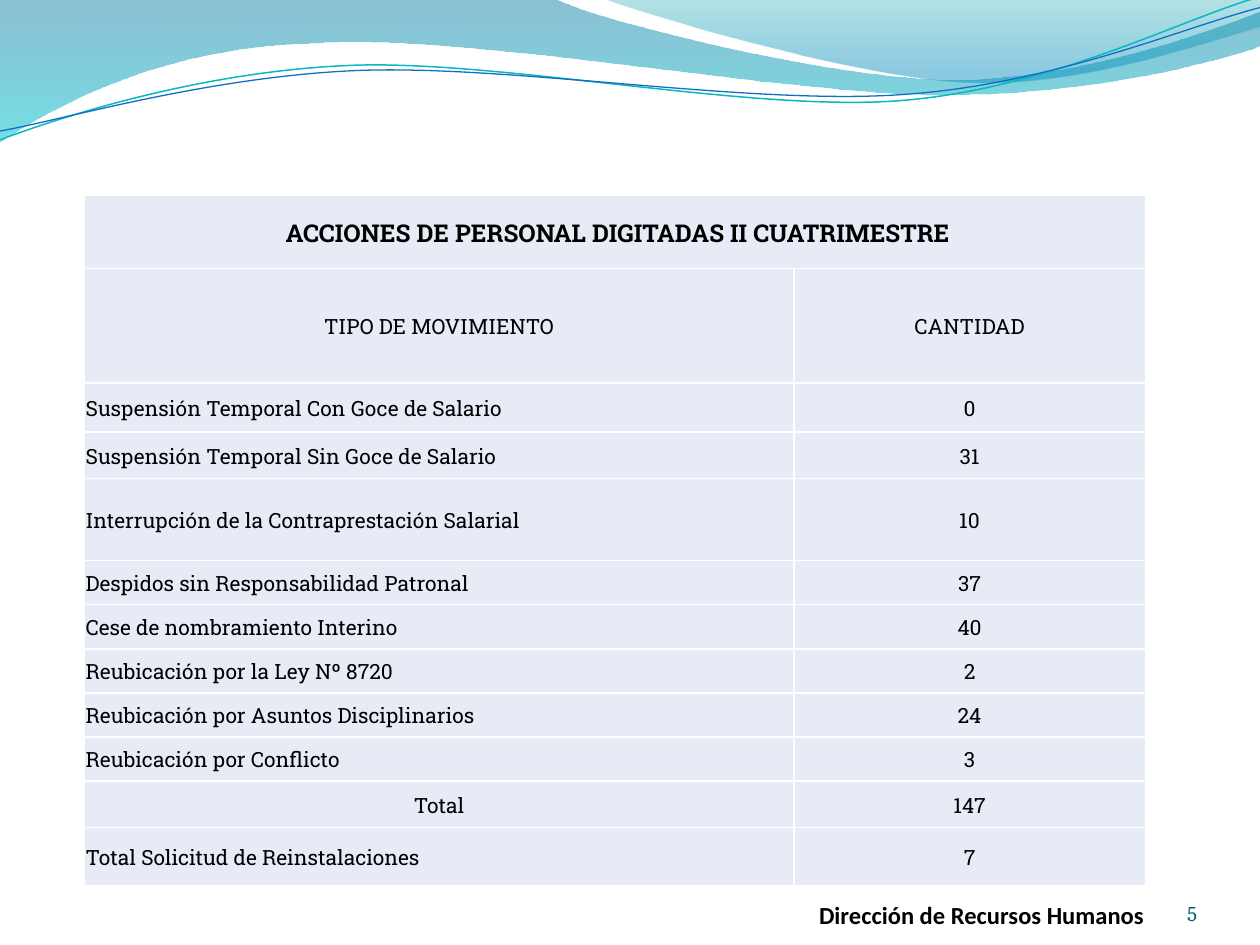
from math import cos, radians, sin

from lxml.etree import SubElement
from pptx import Presentation
from pptx.dml.color import RGBColor
from pptx.enum.text import MSO_ANCHOR as Anchor, PP_ALIGN as Align
from pptx.oxml import parse_xml
from pptx.oxml.ns import nsdecls, qn
from pptx.util import Inches, Pt

BLACK = RGBColor(0x00, 0x00, 0x00)
WHITE = RGBColor(0xFF, 0xFF, 0xFF)
CELL = RGBColor(0xE7, 0xEB, 0xF5)
PAGE_NUMBER = RGBColor(0x04, 0x5D, 0x75)
TEAL_LINE = RGBColor(0x0A, 0xB8, 0xBF)
BLUE_LINE = RGBColor(0x0F, 0x6F, 0xC6)
DEEP_BLUE = RGBColor(0x00, 0x74, 0xA1)
CYAN = RGBColor(0x00, 0xC6, 0xCF)
TEAL = RGBColor(0x00, 0xA1, 0xA9)
SKY_BLUE = RGBColor(0x00, 0x8B, 0xBF)

CURVE_ROTATION = 357.3

# Outlines in slide inches: a pair is a corner, six numbers are a Bezier curve
LEFT_WAVE = [
    (0, 0), (4.4, -0.01),
    (4.76, 0.17, 6.64, 0.63, 7.58, 0.63), (8.53, 0.63, 9.58, 0.26, 10, 0.09),
    (10.01, 0.36),
    (9.83, 0.44, 8.7, 0.76, 7.46, 0.75), (6.22, 0.75, 3.82, 0.28, 2.57, 0.34),
    (1.29, 0.36, 0.46, 0.83, -0.01, 1.13), (0, 0),
]
RIGHT_WAVE = [
    (4.79, -0.01),
    (5.09, 0.11, 6.82, 0.62, 7.69, 0.65), (8.56, 0.69, 9.61, 0.32, 10, 0.21),
    (10, 0), (4.79, -0.01),
]
TEAL_CURVE = [
    (0, 1.11),
    (0.48, 0.93, 1.58, 0.57, 2.77, 0.52), (3.95, 0.47, 5.93, 0.89, 7.13, 0.8),
    (8.33, 0.71, 9.38, 0.15, 9.98, -0.02),
]
BLUE_CURVE = [
    (0, 1.04),
    (0.47, 0.96, 1.64, 0.61, 2.83, 0.56), (4.03, 0.51, 5.97, 0.84, 7.17, 0.75),
    (8.36, 0.67, 9.41, 0.21, 10, 0.06),
]

TITLE = " ACCIONES DE PERSONAL DIGITADAS II CUATRIMESTRE"
HEADER = ("TIPO DE MOVIMIENTO", "CANTIDAD")
MOVEMENTS = [
    ("Suspensión Temporal Con Goce de Salario", "0"),
    ("Suspensión Temporal Sin Goce de Salario", "31"),
    ("Interrupción de la Contraprestación Salarial", "10"),
    ("Despidos sin Responsabilidad Patronal", "37"),
    ("Cese de nombramiento Interino", "40"),
    ("Reubicación por la Ley Nº 8720", "2"),
    ("Reubicación por Asuntos Disciplinarios", "24"),
    ("Reubicación por Conflicto", "3"),
    ("Total", "147"),
    ("Total Solicitud de Reinstalaciones", "7"),
]
COLUMN_WIDTHS = [5.63, 2.79]
ROW_HEIGHTS = [0.58, 0.91, 0.39, 0.37, 0.65] + [0.35] * 5 + [0.37, 0.46]


class SlideBuilder:
    table_font = "Roboto Slab"

    def __init__(self, slide):
        self.slide = slide

    def outline(self, shapes, box, segments, rotation=0, close=False):
        """Freeform that fills box, with its segments given as they lie after rotation."""
        left, top, width, height = box
        builder = shapes.build_freeform(Inches(left), Inches(top))
        builder.add_line_segments([(Inches(left + width), Inches(top + height))], close=False)
        shape = builder.convert_to_shape()
        shape.shadow.inherit = False
        shape.rotation = rotation

        geometry = shape._element.spPr.find(".//" + qn("a:path"))
        for command in list(geometry):
            geometry.remove(command)
        cosine, sine = cos(radians(-rotation)), sin(radians(-rotation))
        for index, segment in enumerate(segments):
            tag = "a:moveTo" if index == 0 else "a:lnTo" if len(segment) == 2 else "a:cubicBezTo"
            command = SubElement(geometry, qn(tag))
            for x, y in zip(segment[::2], segment[1::2]):
                dx, dy = x - left - width / 2, y - top - height / 2
                SubElement(command, qn("a:pt"),
                           x=str(Inches(width / 2 + dx * cosine - dy * sine)),
                           y=str(Inches(height / 2 + dx * sine + dy * cosine)))
        if close:
            SubElement(geometry, qn("a:close"))
        return shape

    def wave(self, box, segments, stops):
        """Filled wave with a vertical gradient; stops are (position, colour, opacity)."""
        shape = self.outline(self.slide.shapes, box, segments, close=True)
        shape.line.fill.background()
        stop_xml = "".join(
            f'<a:gs pos="{position * 1000}"><a:srgbClr val="{color}">'
            f'<a:alpha val="{opacity * 1000}"/></a:srgbClr></a:gs>'
            for position, color, opacity in stops)
        gradient = parse_xml(
            f'<a:gradFill {nsdecls("a")} rotWithShape="1"><a:gsLst>{stop_xml}</a:gsLst>'
            '<a:lin ang="5400000" scaled="0"/></a:gradFill>')
        shape._element.spPr.find(qn("a:custGeom")).addnext(gradient)

    def curves(self, curves):
        """Group of rotated open lines."""
        group = self.slide.shapes.add_group_shape()
        for box, segments, color, width in curves:
            shape = self.outline(group.shapes, box, segments, CURVE_ROTATION)
            shape.fill.background()
            shape.line.color.rgb = color
            shape.line.width = Pt(width)

    def style(self, paragraph, font, size, color, bold=False, align=Align.LEFT):
        paragraph.alignment = align
        paragraph.font.name = font
        paragraph.font.size = Pt(size)
        paragraph.font.bold = bold
        paragraph.font.color.rgb = color

    def text(self, content, left, top, width, height, font, size, color, **options):
        box = self.slide.shapes.add_textbox(
            Inches(left), Inches(top), Inches(width), Inches(height))
        frame = box.text_frame
        frame.word_wrap = True
        frame.vertical_anchor = Anchor.BOTTOM
        frame.margin_left = frame.margin_right = frame.margin_top = frame.margin_bottom = 0
        frame.text = content
        self.style(frame.paragraphs[0], font, size, color, **options)

    def cell(self, cell, content, size=12, bold=False, align=Align.CENTER):
        cell.text = content
        cell.vertical_anchor = Anchor.MIDDLE
        cell.margin_left = cell.margin_right = cell.margin_top = Inches(0.01)
        cell.margin_bottom = 0
        self.style(cell.text_frame.paragraphs[0], self.table_font, size, BLACK, bold, align)

    def cell_frame(self, cell):
        properties = cell._tc.get_or_add_tcPr()
        for side in ("a:lnL", "a:lnR", "a:lnT", "a:lnB"):
            border = SubElement(properties, qn(side), w=str(Pt(1)))
            SubElement(SubElement(border, qn("a:solidFill")), qn("a:srgbClr"), val=str(WHITE))
        cell.fill.solid()
        cell.fill.fore_color.rgb = CELL

    def table(self, left, top):
        table = self.slide.shapes.add_table(
            len(ROW_HEIGHTS), len(COLUMN_WIDTHS), Inches(left), Inches(top),
            Inches(sum(COLUMN_WIDTHS)), Inches(sum(ROW_HEIGHTS))).table
        for column, width in zip(table.columns, COLUMN_WIDTHS):
            column.width = Inches(width)
        for row, height in zip(table.rows, ROW_HEIGHTS):
            row.height = Inches(height)
        for cell in table.iter_cells():
            self.cell_frame(cell)

        table.cell(0, 0).merge(table.cell(0, 1))
        self.cell(table.cell(0, 0), TITLE, size=14, bold=True)
        for row, (movement, quantity) in enumerate([HEADER] + MOVEMENTS, start=1):
            centred = movement in (HEADER[0], "Total")
            self.cell(table.cell(row, 0), movement,
                      align=Align.CENTER if centred else Align.LEFT)
            self.cell(table.cell(row, 1), quantity)


def main():
    presentation = Presentation()
    presentation.slide_width, presentation.slide_height = Inches(10), Inches(7.5)
    builder = SlideBuilder(presentation.slides.add_slide(presentation.slide_layouts[6]))

    # Waves along the top
    builder.wave((-0.01, -0.01, 10.02, 1.14), LEFT_WAVE,
                 [(0, DEEP_BLUE, 45), (100, CYAN, 55)])
    builder.wave((4.79, -0.01, 5.21, 0.7), RIGHT_WAVE,
                 [(0, TEAL, 30), (80, SKY_BLUE, 45)])
    builder.curves([((-0.02, 0.22, 10.02, 0.71), TEAL_CURVE, TEAL_LINE, 0.85),
                    ((-0.02, 0.3, 10.03, 0.58), BLUE_CURVE, BLUE_LINE, 0.75)])

    # Footer and page number
    builder.text("Dirección de Recursos Humanos", 6.5, 6.98, 2.99, 0.4,
                 "Calibri", 14, BLACK, bold=True)
    builder.text("5", 8.67, 6.95, 0.83, 0.4, "Cambria", 12, PAGE_NUMBER, align=Align.RIGHT)

    # Personnel movements
    builder.table(0.67, 1.55)

    presentation.save("out.pptx")


if __name__ == "__main__":
    main()
